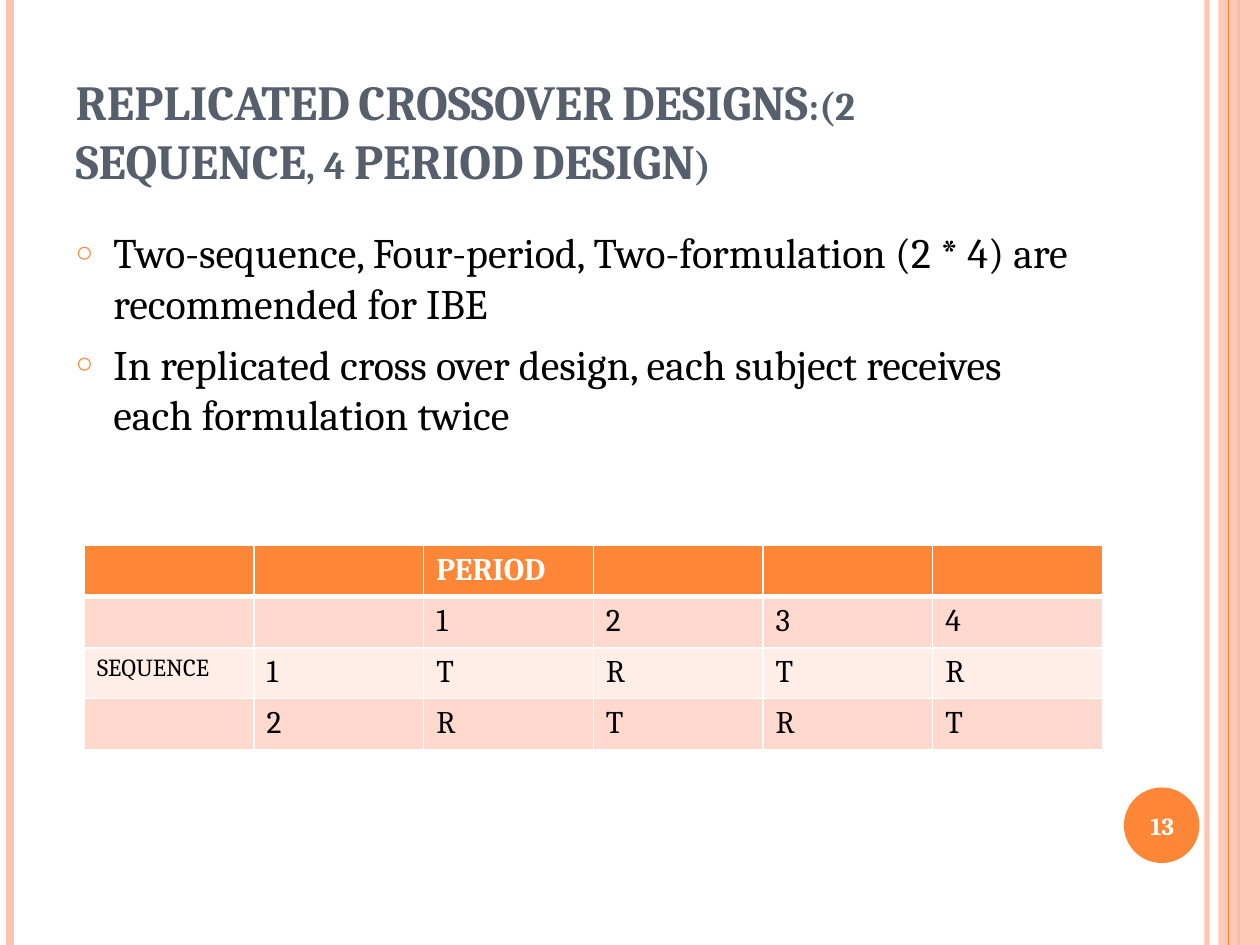
"""Build the replicated crossover designs slide."""
from dataclasses import dataclass
from typing import Any

from lxml import etree
from pptx import Presentation
from pptx.dml.color import RGBColor
from pptx.enum.shapes import MSO_CONNECTOR, MSO_SHAPE
from pptx.enum.text import MSO_ANCHOR, MSO_AUTO_SIZE, PP_ALIGN
from pptx.oxml.ns import qn
from pptx.util import Inches, Pt

STRAIGHT = MSO_CONNECTOR.STRAIGHT
RECTANGLE, OVAL = MSO_SHAPE.RECTANGLE, MSO_SHAPE.OVAL
TOP, MIDDLE, BOTTOM = MSO_ANCHOR.TOP, MSO_ANCHOR.MIDDLE, MSO_ANCHOR.BOTTOM
LEFT, CENTER = PP_ALIGN.LEFT, PP_ALIGN.CENTER
NO_FIT = MSO_AUTO_SIZE.NONE

ORANGE = RGBColor(0xFE, 0x86, 0x37)
PEACH = RGBColor(0xFE, 0xC3, 0xAE)
ROW_DARK = RGBColor(0xFF, 0xD9, 0xCE)
ROW_LIGHT = RGBColor(0xFF, 0xED, 0xE8)
SLATE = RGBColor(0x57, 0x5F, 0x6D)
WHITE = RGBColor(0xFF, 0xFF, 0xFF)
BLACK = RGBColor(0, 0, 0)

TITLE_FONT = {"name": "Cambria", "size": Pt(28), "bold": True}
BODY_FONT = {"name": "Cambria", "size": Pt(24), "bold": False}
NUMBER_FONT = {"name": "Cambria", "size": Pt(14), "bold": True}
HEADER_FONT = {"name": "Cambria", "size": Pt(18), "bold": True}
CELL_FONT = {**HEADER_FONT, "bold": False}
LABEL_FONT = {**CELL_FONT, "size": Pt(14)}

TITLE = "REPLICATED CROSSOVER DESIGNS:(2 SEQUENCE, 4 PERIOD DESIGN)"
POINTS = (
    "Two-sequence, Four-period, Two-formulation (2 * 4) are recommended for IBE",
    "In replicated cross over design, each subject receives each formulation twice",
)
DESIGN = (
    ("", "", "PERIOD", "", "", ""),
    ("", "", "1", "2", "3", "4"),
    ("SEQUENCE", "1", "T", "R", "T", "R"),
    ("", "2", "R", "T", "R", "T"),
)
ROW_FILLS = (ORANGE, ROW_DARK, ROW_LIGHT, ROW_DARK)


@dataclass(frozen=True)
class Stripe:
    x: float
    color: RGBColor
    width: float
    opacity: int = 100


@dataclass(frozen=True)
class Panel:
    kind: Any
    box: tuple[float, float, float, float]
    color: RGBColor
    opacity: int = 100


LEFT_STRIPES = (
    Stripe(9.58, PEACH, 3, 93),
    Stripe(0.08, PEACH, 4.5),
    Stripe(9.83, ORANGE, 1.5),
)
EDGE_BAND = Panel(RECTANGLE, (9.67, 0, 0.33, 7.5), PEACH, 87)
EDGE_STRIPE = Stripe(9.75, ORANGE, 0.75)
NUMBER_DISC = Panel(OVAL, (8.92, 6.25, 0.6, 0.6), ORANGE)


def set_opacity(properties: Any, percent: int) -> None:
    """Give the first colour under the properties an alpha value."""
    if percent < 100:
        color = next(properties.iter(qn("a:srgbClr")))
        etree.SubElement(color, qn("a:alpha"), val=str(percent * 1000))


def draw_stripe(slide: Any, stripe: Stripe) -> None:
    """Draw a vertical line over the full height."""
    x = Inches(stripe.x)
    line = slide.shapes.add_connector(STRAIGHT, x, 0, x, Inches(7.5))
    line.line.color.rgb = stripe.color
    line.line.width = Pt(stripe.width)
    properties = line._element.spPr
    set_opacity(properties, stripe.opacity)
    etree.SubElement(properties, qn("a:effectLst"))


def draw_panel(slide: Any, panel: Panel) -> None:
    """Draw a filled shape without an outline."""
    shape = slide.shapes.add_shape(panel.kind, *map(Inches, panel.box))
    shape.shadow.inherit = False
    shape.fill.solid()
    shape.fill.fore_color.rgb = panel.color
    shape.line.fill.background()
    set_opacity(shape._element.spPr, panel.opacity)


def add_run(paragraph: Any, text: str, style: dict[str, Any], color: RGBColor) -> Any:
    """Add a formatted run."""
    run = paragraph.add_run()
    run.text = text
    for attribute, value in style.items():
        setattr(run.font, attribute, value)
    run.font.color.rgb = color
    return run


def place(shape: Any, box: tuple[float, float, float, float], anchor: Any) -> Any:
    """Move a text shape and return its prepared frame."""
    for attribute, value in zip(("left", "top", "width", "height"), box):
        setattr(shape, attribute, Inches(value))
    frame = shape.text_frame
    frame.word_wrap = True
    frame.auto_size = NO_FIT
    frame.vertical_anchor = anchor
    return frame


def set_bullet(paragraph: Any) -> None:
    """Apply the hanging orange ring bullet."""
    properties = paragraph._p.get_or_add_pPr()
    properties.set("marL", str(Inches(0.3)))
    properties.set("indent", str(-Inches(0.3)))
    color = etree.SubElement(properties, qn("a:buClr"))
    etree.SubElement(color, qn("a:srgbClr"), val=str(ORANGE))
    etree.SubElement(properties, qn("a:buSzPct"), val="70000")
    etree.SubElement(properties, qn("a:buChar"), char="○")


def set_borders(cell: Any, top: float, bottom: float) -> None:
    """Give a cell white borders."""
    properties = cell._tc.get_or_add_tcPr()
    for side, width in (("L", 1), ("R", 1), ("T", top), ("B", bottom)):
        border = etree.SubElement(properties, qn(f"a:ln{side}"), w=str(Pt(width)))
        fill = etree.SubElement(border, qn("a:solidFill"))
        etree.SubElement(fill, qn("a:srgbClr"), val=str(WHITE))


def draw_design(slide: Any) -> None:
    """Draw the sequence by period table."""
    frame = slide.shapes.add_table(
        len(DESIGN), len(DESIGN[0]), Inches(0.67), Inches(4.33), Inches(8.08), Inches(1.62)
    )
    for row, (texts, fill) in enumerate(zip(DESIGN, ROW_FILLS)):
        for column, text in enumerate(texts):
            cell = frame.table.cell(row, column)
            set_borders(cell, 3 if row == 1 else 1, 3 if row == 0 else 1)
            cell.fill.solid()
            cell.fill.fore_color.rgb = fill
            if text:
                body_style = LABEL_FONT if column == 0 else CELL_FONT
                style, color = (HEADER_FONT, WHITE) if row == 0 else (body_style, BLACK)
                add_run(cell.text_frame.paragraphs[0], text, style, color)


def main() -> None:
    """Assemble and save the slide."""
    deck = Presentation()
    deck.slide_width, deck.slide_height = Inches(10), Inches(7.5)
    slide = deck.slides.add_slide(deck.slide_layouts[1])

    for stripe in LEFT_STRIPES:
        draw_stripe(slide, stripe)
    draw_panel(slide, EDGE_BAND)
    draw_stripe(slide, EDGE_STRIPE)
    draw_panel(slide, NUMBER_DISC)

    heading = place(slide.shapes.title, (0.5, 0.3, 8.17, 1.25), BOTTOM).paragraphs[0]
    heading.alignment = LEFT
    heading_run = add_run(heading, TITLE, TITLE_FONT, SLATE)
    heading_run.font._element.set("cap", "small")

    points = place(slide.placeholders[1], (0.5, 1.75, 8.17, 5.33), TOP)
    for index, text in enumerate(POINTS):
        point = points.add_paragraph() if index else points.paragraphs[0]
        point.space_before = Pt(6)
        set_bullet(point)
        add_run(point, text, BODY_FONT, BLACK)

    number_box = (8.89, 6.27, 0.67, 0.57)
    number_shape = slide.shapes.add_textbox(*map(Inches, number_box))
    number = place(number_shape, number_box, MIDDLE).paragraphs[0]
    number.alignment = CENTER
    add_run(number, "13", NUMBER_FONT, WHITE)

    draw_design(slide)
    deck.save("out.pptx")


if __name__ == "__main__":
    main()
